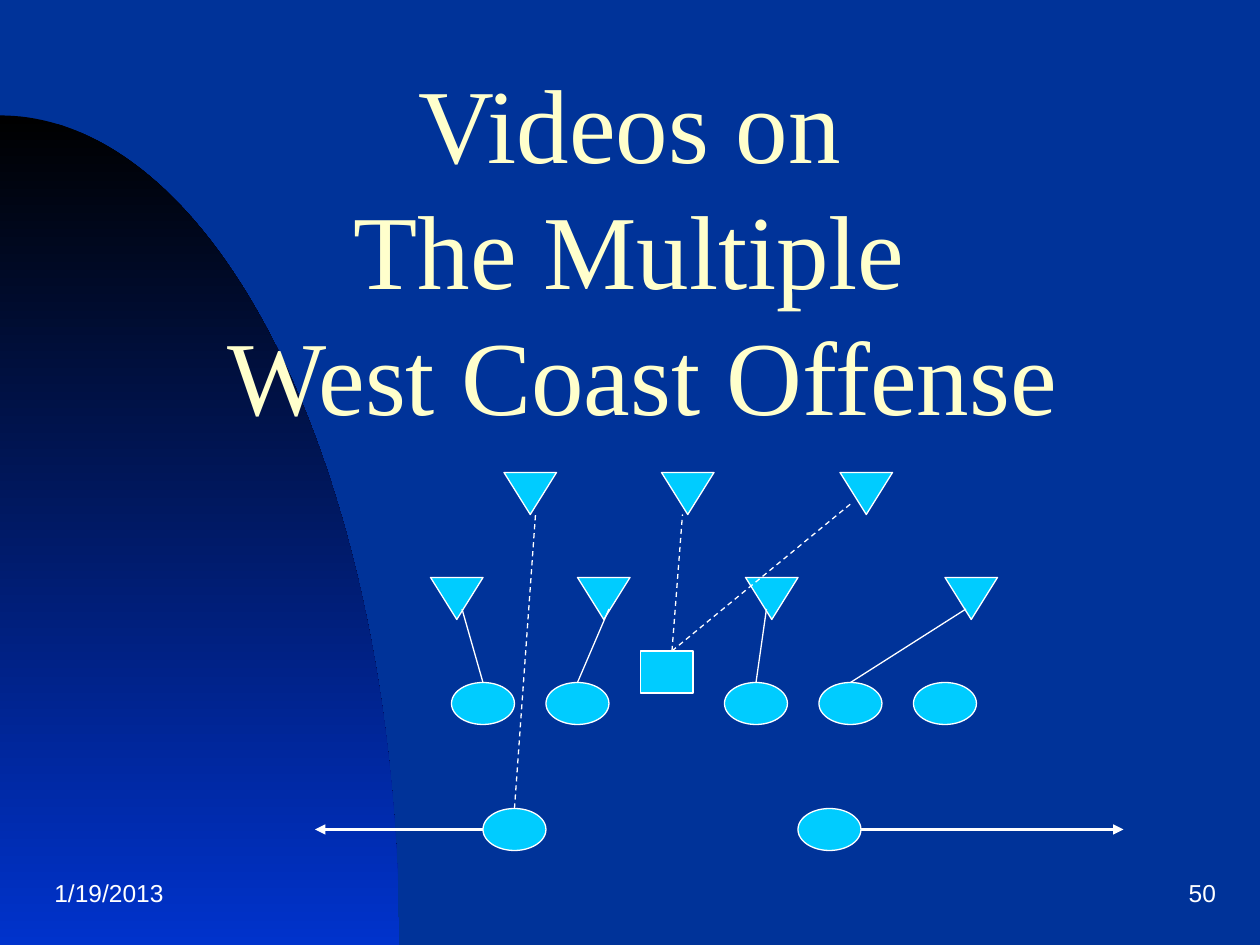
from math import cos, pi, sin

from lxml.etree import SubElement
from pptx import Presentation
from pptx.dml.color import RGBColor
from pptx.enum.dml import MSO_LINE
from pptx.enum.shapes import MSO_CONNECTOR, MSO_SHAPE as SHAPE
from pptx.enum.text import MSO_ANCHOR as ANCHOR, MSO_AUTO_SIZE as AUTO, PP_ALIGN as ALIGN
from pptx.oxml.ns import qn
from pptx.util import Inches, Pt

# Grid of 120 columns by 90 rows, twelve cells to the inch
WHITE, CYAN, CREAM, NAVY = "FFFFFF", "00CCFF", "FFFFCC", "003399"
DEFENDER, LINEMAN, CENTER = (5, 4), (6, 4), (5, 4)
SAFETY_COLS, BACKER_COLS = (48, 63, 80), (41, 55, 71, 90)
LINE_COLS, WIDEOUT_COLS = (43, 52, 69, 78, 87), (46, 76)
BLOCKS = [(46, 65, 44, 58), (55, 65, 58, 58), (72, 65, 73, 58), (81, 65, 92, 58)]
READS = [(64, 62, 65, 49), (64, 62, 81, 48), (49, 77, 51, 49)]
SWEEPS = [(82, 79, 107, 79), (46, 79, 30, 79)]


def grid(*cells):
    return [Inches(c / 12) for c in cells]


def rgb(code):
    return RGBColor.from_string(code)


def add_arch(s, width, top, bottom, steps=90):
    """Quarter ellipse in the lower left corner, dark at its top."""
    points = [(Inches(width / 12 * sin(a)), Inches((bottom - (bottom - top) * cos(a)) / 12))
              for a in (pi / 2 * i / steps for i in range(steps + 1))]
    builder = s.shapes.build_freeform(*points[0], scale=1.0)
    builder.add_line_segments(points[1:] + grid_corner(bottom), close=True)
    sp = builder.convert_to_shape()
    sp.shadow.inherit = False
    sp.line.fill.background()
    sp.fill.gradient()
    sp.fill.gradient_angle = 270
    for stop, code in zip(sp.fill.gradient_stops, ("000000", "0033CC")):
        stop.color.rgb = rgb(code)


def grid_corner(bottom):
    return [tuple(grid(0, bottom))]


def add_text(s, text, box, font, size, color, frame, para):
    tf = s.shapes.add_textbox(*grid(*box)).text_frame
    for name, value in frame.items():
        setattr(tf, name, value)
    p = tf.paragraphs[0]
    p.text = text
    for name, value in para.items():
        setattr(p, name, value)
    for r in p.runs:
        r.font.name, r.font.size = font, Pt(size)
        r.font.color.rgb = rgb(color)


def add_players(s, kind, cols, row, size, rotation=0):
    for col in cols:
        sp = s.shapes.add_shape(kind, *grid(col, row, *size))
        sp.shadow.inherit = False
        sp.rotation = rotation
        sp.fill.solid()
        sp.fill.fore_color.rgb = rgb(CYAN)
        sp.line.color.rgb = rgb(WHITE)
        sp.line.width = Pt(0.75)


def add_routes(s, routes, width=0.75, dash=None, arrow=False):
    for ends in routes:
        line = s.shapes.add_connector(MSO_CONNECTOR.STRAIGHT, *grid(*ends))
        line.line.color.rgb = rgb(WHITE)
        line.line.width = Pt(width)
        if dash:
            line.line.dash_style = dash
        if arrow:
            SubElement(line.line._get_or_add_ln(), qn("a:tailEnd"), type="triangle")
        SubElement(line._element.spPr, qn("a:effectLst"))


def main():
    prs = Presentation()
    prs.slide_width, prs.slide_height = grid(120, 90)
    s = prs.slides.add_slide(prs.slide_layouts[6])
    s.background.fill.solid()
    s.background.fill.fore_color.rgb = rgb(NAVY)

    add_arch(s, 38, 11, 90)
    middle = {"vertical_anchor": ANCHOR.MIDDLE}
    add_text(s, "1/19/2013", (4, 82, 25, 6), "Arial", 14, WHITE,
             {**middle, "word_wrap": True}, {})
    add_text(s, "50", (92, 82, 25, 6), "Arial", 14, WHITE,
             {**middle, "word_wrap": False}, {"alignment": ALIGN.RIGHT})
    add_text(s, "Videos on \vThe Multiple \vWest Coast Offense", (20, 5, 82.4, 37.2),
             "Times New Roman", 60, CREAM,
             {"word_wrap": False, "auto_size": AUTO.SHAPE_TO_FIT_TEXT},
             {"alignment": ALIGN.CENTER, "line_spacing": Pt(72)})

    add_players(s, SHAPE.RECTANGLE, [61], 62, CENTER)
    add_players(s, SHAPE.OVAL, LINE_COLS, 65, LINEMAN)
    add_players(s, SHAPE.OVAL, WIDEOUT_COLS, 77, LINEMAN)
    add_players(s, SHAPE.ISOSCELES_TRIANGLE, BACKER_COLS, 55, DEFENDER, 180)
    add_players(s, SHAPE.ISOSCELES_TRIANGLE, SAFETY_COLS, 45, DEFENDER, 180)

    add_routes(s, BLOCKS)
    add_routes(s, READS, dash=MSO_LINE.DASH)
    add_routes(s, SWEEPS, width=1.5, arrow=True)
    prs.save("out.pptx")


if __name__ == "__main__":
    main()
